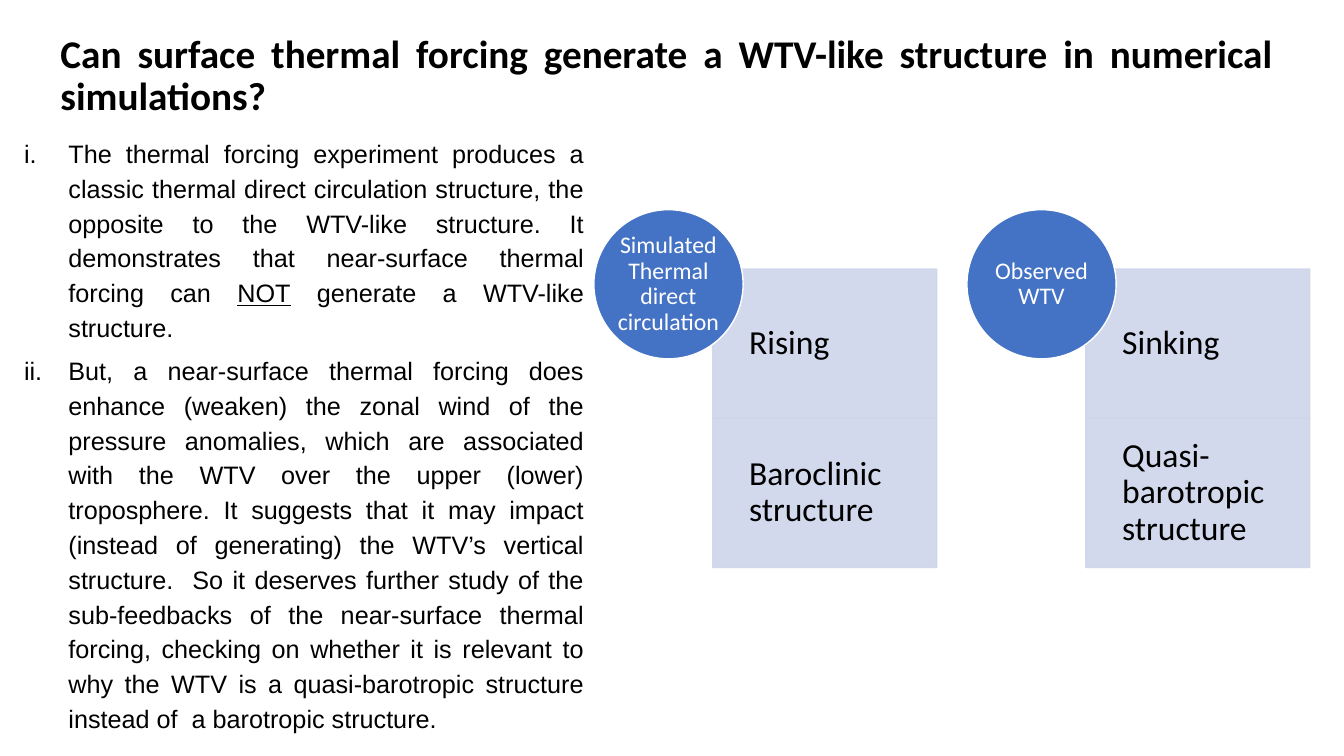
from dataclasses import dataclass

from lxml.etree import SubElement
from pptx import Presentation
from pptx.dml.color import RGBColor
from pptx.enum.shapes import MSO_SHAPE
from pptx.enum.text import MSO_ANCHOR, MSO_AUTO_SIZE, PP_ALIGN
from pptx.oxml.ns import qn
from pptx.util import Inches, Pt


@dataclass(frozen=True)
class Theme:
    black: RGBColor = RGBColor(0, 0, 0)
    white: RGBColor = RGBColor(255, 255, 255)
    accent: RGBColor = RGBColor(0x44, 0x72, 0xC4)
    panel: RGBColor = RGBColor(0xCF, 0xD5, 0xEA)
    heading_font: str = "Calibri"
    body_font: str = "Arial"
    title_size: int = 28
    panel_size: int = 24
    body_size: int = 18
    circle_size: int = 17


class SlideBuilder:
    def __init__(self, slide, theme):
        self.slide = slide
        self.theme = theme

    def apply(self, target, **values):
        for name, value in values.items():
            setattr(target, name, value)

    def frame(self, tf, insets, anchor, auto_size=MSO_AUTO_SIZE.NONE):
        sides = ("margin_left", "margin_top", "margin_right", "margin_bottom")
        self.apply(tf, **dict(zip(sides, map(Inches, insets))))
        self.apply(tf, word_wrap=True, auto_size=auto_size, vertical_anchor=anchor)

    def add_text(self, p, text, font, size, color, **style):
        r = p.add_run()
        r.text = text
        self.apply(r.font, name=font, size=Pt(size), **style)
        r.font.color.rgb = color

    def title(self, text, box):
        t = self.theme
        sp = self.slide.shapes.title
        self.apply(sp, **dict(zip(("left", "top", "width", "height"), map(Inches, box))))
        self.frame(sp.text_frame, (0.1, 0.05, 0.1, 0.05), MSO_ANCHOR.TOP)
        p = sp.text_frame.paragraphs[0]
        self.apply(p, alignment=PP_ALIGN.JUSTIFY, line_spacing=0.9)
        self.add_text(p, text, t.heading_font, t.title_size, t.black, bold=True)

    def numbered_list(self, items, box):
        t = self.theme
        tf = self.slide.shapes.add_textbox(*map(Inches, box)).text_frame
        self.frame(tf, (0.1, 0.05, 0.1, 0.05), MSO_ANCHOR.TOP,
                   MSO_AUTO_SIZE.SHAPE_TO_FIT_TEXT)
        for i, runs in enumerate(items):
            p = tf.add_paragraph() if i else tf.paragraphs[0]
            self.apply(p, alignment=PP_ALIGN.JUSTIFY, line_spacing=1.15,
                       space_after=Pt(6))
            pPr = p._p.get_or_add_pPr()
            pPr.set("marL", str(Inches(0.44)))
            pPr.set("indent", str(-Inches(0.44)))
            SubElement(pPr, qn("a:buFont"), typeface="+mj-lt")
            SubElement(pPr, qn("a:buAutoNum"), type="romanLcPeriod")
            for text, underline in runs:
                self.add_text(p, text, t.body_font, t.body_size, t.black,
                              underline=underline)

    def shape(self, kind, box, text, fill, line, size, color, insets, align, alpha=100):
        sp = self.slide.shapes.add_shape(kind, *map(Inches, box))
        sp.shadow.inherit = False
        sp.fill.solid()
        sp.fill.fore_color.rgb = fill
        sp.line.color.rgb = line
        sp.line.width = Pt(1)
        if alpha < 100:
            for clr in sp._element.spPr.iter(qn("a:srgbClr")):
                SubElement(clr, qn("a:alpha"), val=str(alpha * 1000))
        self.frame(sp.text_frame, insets, MSO_ANCHOR.MIDDLE)
        p = sp.text_frame.paragraphs[0]
        self.apply(p, alignment=align, line_spacing=0.9)
        self.add_text(p, text, self.theme.heading_font, size, color)

    def panel(self, text, box):
        t = self.theme
        self.shape(MSO_SHAPE.RECTANGLE, box, text, t.panel, t.panel, t.panel_size,
                   t.black, (0.36, 0.19, 0.19, 0.19), PP_ALIGN.LEFT, alpha=90)

    def circle(self, text, box):
        t = self.theme
        self.shape(MSO_SHAPE.OVAL, box, text, t.accent, t.white, t.circle_size,
                   t.white, (0, 0, 0, 0), PP_ALIGN.CENTER)

    def comparison(self, heading, features, left, top, side):
        for row, feature in enumerate(features):
            self.panel(feature, (left + 1.18, top + 0.59 + row * side, 2.22, side))
        self.circle(heading, (left, top, side, side))


TITLE = "Can surface thermal forcing generate a WTV-like structure in numerical simulations?"
FINDINGS = [
    [
        ("The thermal forcing experiment produces a classic thermal direct circulation "
         "structure, the opposite to the WTV-like structure. It demonstrates that "
         "near-surface thermal forcing can ", False),
        ("NOT", True),
        (" generate a WTV-like structure.", False),
    ],
    [
        ("But, a near-surface thermal forcing does enhance (weaken) the zonal wind of the "
         "pressure anomalies, which are associated with the WTV over the upper (lower) "
         "troposphere. It suggests that it may impact (instead of generating) the WTV’s "
         "vertical structure.  So it deserves further study of the sub-feedbacks of the "
         "near-surface thermal forcing, checking on whether it is relevant to why the WTV "
         "is a quasi-barotropic structure instead of  a barotropic structure.", False),
    ],
]
COMPARISONS = [
    ("Simulated Thermal direct circulation", ["Rising", "Baroclinic structure"]),
    ("Observed WTV", ["Sinking", "Quasi-barotropic structure"]),
]


def main():
    prs = Presentation()
    prs.slide_width, prs.slide_height = Inches(13.33), Inches(7.5)
    s = SlideBuilder(prs.slides.add_slide(prs.slide_layouts[5]), Theme())
    s.title(TITLE, (0.5, 0.29, 12.22, 0.89))
    s.numbered_list(FINDINGS, (0.14, 1.28, 5.75, 6.51))
    for col, (heading, features) in enumerate(COMPARISONS):
        s.comparison(heading, features, left=5.89 + col * 3.7, top=2.08, side=1.48)
    prs.save("out.pptx")


if __name__ == "__main__":
    main()
